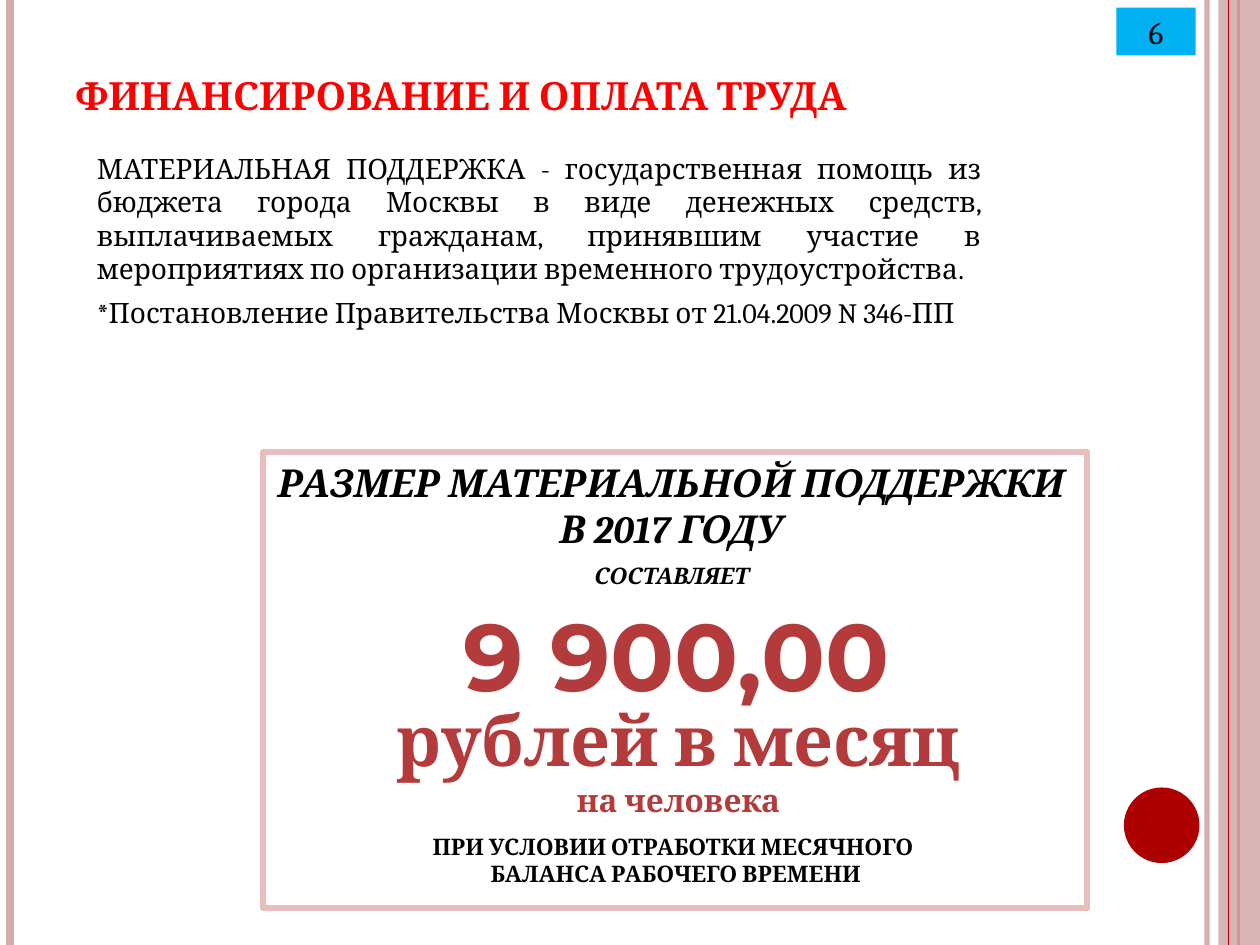
from dataclasses import dataclass

from lxml.etree import SubElement
from pptx import Presentation
from pptx.dml.color import RGBColor
from pptx.enum.shapes import MSO_CONNECTOR, MSO_SHAPE
from pptx.enum.text import MSO_ANCHOR, PP_ALIGN
from pptx.oxml.ns import qn
from pptx.util import Inches, Pt


@dataclass(frozen=True)
class Theme:
    font: str = "Cambria"
    number_font: str = "Montserrat"
    black: str = "000000"
    title: str = "FF0000"
    amount: str = "B33B3B"
    accent: str = "AD0101"
    stripe: str = "D3ABAB"
    frame: str = "E7BEBE"
    badge: str = "00B0F0"
    small: float = 13
    body: float = 16
    medium: float = 18
    gap: float = 19
    heading: float = 22
    title_size: float = 22.2
    large: float = 40
    huge: float = 54


class Deck:
    """Draws styled elements on the current slide."""

    def __init__(self, prs, theme):
        self.theme = theme
        self.s = prs.slides.add_slide(prs.slide_layouts[6])

    def set_alpha(self, sp, percent):
        for clr in sp._element.spPr.iter(qn("a:srgbClr")):
            SubElement(clr, qn("a:alpha")).set("val", str(percent * 1000))

    def vline(self, x, color, width, alpha=100):
        ln = self.s.shapes.add_connector(
            MSO_CONNECTOR.STRAIGHT, Inches(x), Inches(0), Inches(x), Inches(7.5))
        ln.line.color.rgb = RGBColor.from_string(color)
        ln.line.width = Pt(width)
        if alpha < 100:
            self.set_alpha(ln, alpha)
        SubElement(ln._element.spPr, qn("a:effectLst"))

    def shape(self, kind, box, fill=None, line=None, width=1, alpha=100):
        sp = self.s.shapes.add_shape(kind, *map(Inches, box))
        sp.shadow.inherit = False
        if fill:
            sp.fill.solid()
            sp.fill.fore_color.rgb = RGBColor.from_string(fill)
        else:
            sp.fill.background()
        if line:
            sp.line.color.rgb = RGBColor.from_string(line)
            sp.line.width = Pt(width)
        else:
            sp.line.fill.background()
        if alpha < 100:
            self.set_alpha(sp, alpha)
        return sp

    def textbox(self, box, paragraphs, anchor=MSO_ANCHOR.TOP, wrap=True):
        sp = self.s.shapes.add_textbox(*map(Inches, box))
        self.fill_text(sp, paragraphs, anchor, wrap)

    def fill_text(self, sp, paragraphs, anchor=MSO_ANCHOR.TOP, wrap=True):
        tf = sp.text_frame
        tf.word_wrap = wrap
        tf.vertical_anchor = anchor
        for i, (align, before, runs) in enumerate(paragraphs):
            p = tf.add_paragraph() if i else tf.paragraphs[0]
            p.alignment = align
            if before:
                p.space_before = Pt(before)
            for item in runs:
                self.add_text(p, *item)

    def add_text(self, p, text, size, color, bold=False, italic=False, font=None):
        r = p.add_run()
        r.text = text
        r.font.name = font or self.theme.font
        r.font.size = Pt(size)
        r.font.bold = bold
        r.font.italic = italic
        r.font.color.rgb = RGBColor.from_string(color)


def main():
    prs = Presentation()
    prs.slide_width, prs.slide_height = Inches(10), Inches(7.5)
    t = Theme()
    deck = Deck(prs, t)
    center, left = PP_ALIGN.CENTER, PP_ALIGN.LEFT

    deck.vline(9.58, t.stripe, 3, alpha=93)
    deck.vline(0.08, t.stripe, 4.5)
    deck.vline(9.83, t.accent, 1.5)
    deck.shape(MSO_SHAPE.RECTANGLE, (9.67, 0, 0.33, 7.5), t.stripe, alpha=87)
    deck.vline(9.75, t.accent, 0.75)
    deck.shape(MSO_SHAPE.OVAL, (8.92, 6.25, 0.6, 0.6), t.accent)

    frame = deck.shape(MSO_SHAPE.RECTANGLE, (2.09, 3.59, 6.54, 3.62),
                       line=t.frame, width=3.5)
    deck.fill_text(frame, [
        (center, 0, [("РАЗМЕР МАТЕРИАЛЬНОЙ ПОДДЕРЖКИ ", t.heading, t.black, True, True)]),
        (center, 0, [("В 2017 ГОДУ ", t.heading, t.black, True, True)]),
        (center, 0, [("СОСТАВЛЯЕТ", t.small, t.black, True, True),
                     (" ", t.gap, t.black, True)]),
        (center, 138, [("ПРИ УСЛОВИИ ОТРАБОТКИ МЕСЯЧНОГО ", t.small, t.black, True)]),
        (center, 0, [("БАЛАНСА РАБОЧЕГО ВРЕМЕНИ", t.small, t.black, True)]),
    ])
    deck.textbox((2.95, 4.69, 4.84, 1.01), [
        (center, 0, [("9 900,00", t.huge, t.amount, True, False, t.number_font)]),
    ])
    deck.textbox((3.03, 5.48, 4.71, 1.11), [
        (center, 0, [("рублей в месяц ", t.large, t.amount, True)]),
        (center, 0, [("на человека", t.medium, t.amount, True)]),
    ], wrap=False)

    deck.textbox((0.5, 0.3, 6.86, 0.69), [
        (left, 0, [("ФИНАНСИРОВАНИЕ И ОПЛАТА ТРУДА", t.title_size, t.title, True)]),
    ], MSO_ANCHOR.BOTTOM)
    deck.textbox((0.67, 1.15, 7.22, 1.53), [
        (PP_ALIGN.JUSTIFY, 0, [(
            "МАТЕРИАЛЬНАЯ ПОДДЕРЖКА - государственная помощь из бюджета "
            "города Москвы в виде денежных средств, выплачиваемых гражданам, "
            "принявшим участие в мероприятиях по организации временного "
            "трудоустройства.", t.body, t.black)]),
        (left, 6, [("*Постановление Правительства Москвы от 21.04.2009 N 346-ПП",
                    t.body, t.black)]),
    ])
    badge = deck.shape(MSO_SHAPE.RECTANGLE, (8.86, 0.06, 0.63, 0.38), t.badge)
    deck.fill_text(badge, [(center, 0, [("6", t.medium, t.black)])], MSO_ANCHOR.MIDDLE)

    prs.save("out.pptx")


if __name__ == "__main__":
    main()
